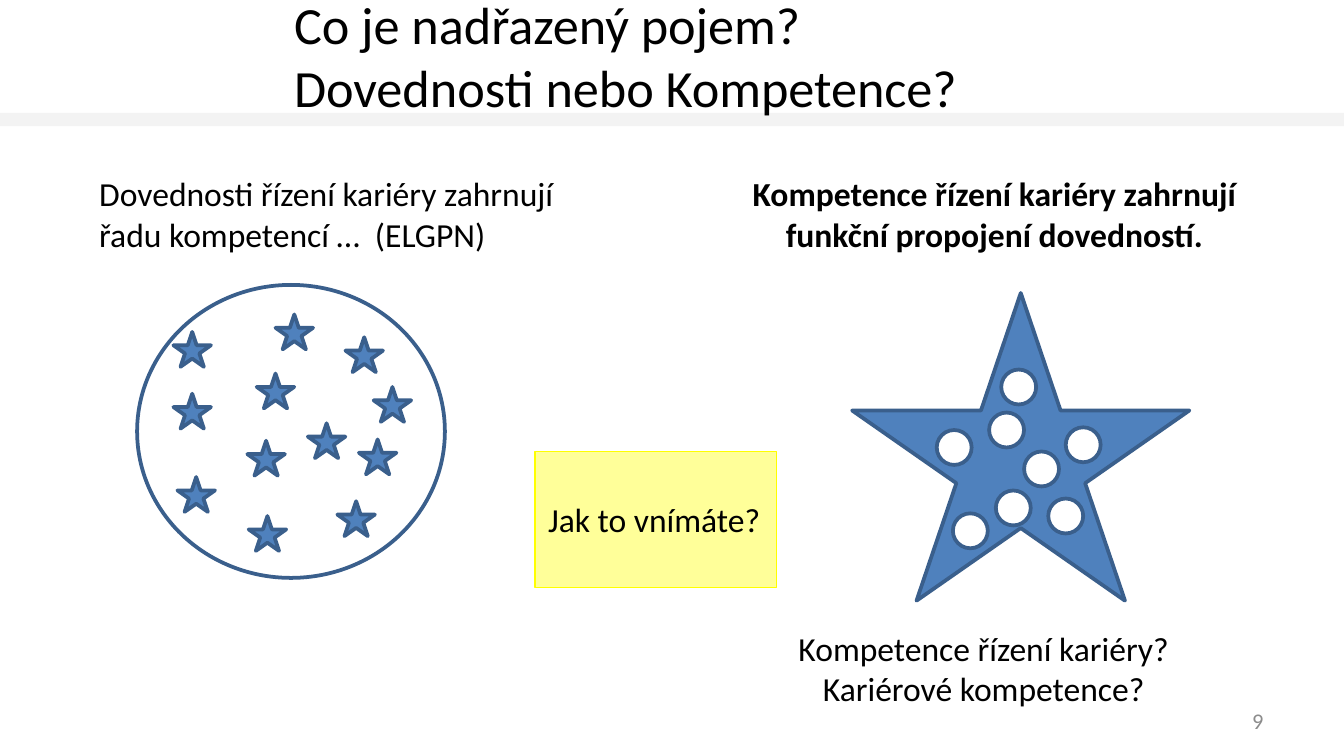
from lxml import etree
from pptx import Presentation
from pptx.dml.color import RGBColor
from pptx.enum.shapes import MSO_SHAPE
from pptx.enum.text import MSO_ANCHOR, PP_ALIGN
from pptx.oxml.ns import qn
from pptx.util import Inches, Pt

RECT, OVAL, STAR = MSO_SHAPE.RECTANGLE, MSO_SHAPE.OVAL, MSO_SHAPE.STAR_5_POINT
LEFT, CENTER, RIGHT = PP_ALIGN.LEFT, PP_ALIGN.CENTER, PP_ALIGN.RIGHT
TOP, MIDDLE = MSO_ANCHOR.TOP, MSO_ANCHOR.MIDDLE
FONT = "Calibri"
BLACK, WHITE, BLUE, NAVY = "000000", "FFFFFF", "4F81BD", "3A5F8C"
WIDTH = 10
HEIGHT = WIDTH * 9 / 16

STARS = [
    (1.29, 2.47), (2.51, 3.73), (1.32, 3.55), (2.67, 3.27),
    (2.29, 3.15), (1.85, 3.84), (1.29, 2.93), (2.57, 2.51),
    (2.05, 2.34), (1.91, 2.78), (1.84, 3.28), (2.78, 2.88),
]
DOTS = [
    (7.41, 3.65), (7.62, 3.36), (7.93, 3.18), (6.97, 3.2),
    (7.09, 3.82), (7.8, 3.71), (7.36, 3.07), (7.45, 2.75),
]


def paint(color, value):
    """Set a colour format from a hex string."""
    color.rgb = RGBColor.from_string(value)


def add_run(para, text, size, color, bold):
    """Add one styled run to a paragraph."""
    run = para.add_run()
    run.text = text
    run.font.name = FONT
    run.font.size = Pt(size)
    run.font.bold = bold
    paint(run.font.color, color)


def write(frame, paras, size=18, align=LEFT, anchor=TOP, color=BLACK,
          bold=False, wrap=True):
    """Fill a text frame with paragraphs, breaking lines at newlines."""
    frame.word_wrap = wrap
    frame.vertical_anchor = anchor
    for i, text in enumerate(paras):
        para = frame.add_paragraph() if i else frame.paragraphs[0]
        para.alignment = align
        for j, line in enumerate(text.split("\n")):
            if j:
                para.add_line_break()
            add_run(para, line, size, color, bold)


def add_text(slide, box, paras, **style):
    """Add a text box at left, top, width, height."""
    label = slide.shapes.add_textbox(*map(Inches, box))
    write(label.text_frame, paras, **style)


def add_shape(slide, kind, box, fill, line=NAVY, width=2):
    """Add a filled preset shape, outlined unless line is None."""
    shape = slide.shapes.add_shape(kind, *map(Inches, box))
    shape.shadow.inherit = False
    shape.fill.solid()
    paint(shape.fill.fore_color, fill)
    if line is None:
        shape.line.fill.background()
    else:
        paint(shape.line.color, line)
        shape.line.width = Pt(width)
    return shape


def add_band(slide):
    """Add the translucent band below the title."""
    band = add_shape(slide, RECT, (0, 0.84, WIDTH, 0.1), "191919", None)
    tint = band._element.spPr.find(".//" + qn("a:srgbClr"))
    etree.SubElement(tint, qn("a:alpha"), val="5000")


def add_set(slide, whole, part, spots, size):
    """Add a large shape and the small ones scattered inside it."""
    add_shape(slide, *whole)
    kind, fill = part
    for spot in spots:
        add_shape(slide, kind, spot + size, fill)


def main():
    """Build the slide and save it."""
    deck = Presentation()
    deck.slide_width, deck.slide_height = Inches(WIDTH), Inches(HEIGHT)
    slide = deck.slides.add_slide(deck.slide_layouts[6])

    add_band(slide)
    add_text(slide, (2.09, 0, 7.9, 0.82),
             ["Co je nadřazený pojem? \nDovednosti nebo Kompetence?"],
             size=28, anchor=MIDDLE)
    add_text(slide, (7.17, 5.21, 2.33, 0.3), ["9"],
             size=12, align=RIGHT, anchor=MIDDLE, color="8C8C8C")

    add_text(slide, (0.64, 1.24, 3.86, 0.71),
             ["Dovednosti řízení kariéry zahrnují řadu kompetencí …  (ELGPN)"])
    add_set(slide, (OVAL, (1.02, 2.12, 2.29, 2.18), WHITE),
            (STAR, BLUE), STARS, (0.28, 0.26))

    add_set(slide, (STAR, (6.34, 2.18, 2.51, 2.29), BLUE),
            (OVAL, WHITE), DOTS, (0.26, 0.26))
    add_text(slide, (5.47, 1.24, 3.86, 0.71),
             ["Kompetence řízení kariéry zahrnují funkční propojení dovedností."],
             align=CENTER, bold=True)

    ask = add_shape(slide, RECT, (3.98, 3.36, 1.8, 1.01),
                    "FFFF99", "FFFF00", 0.75)
    write(ask.text_frame, ["Jak to vnímáte?"], anchor=MIDDLE, wrap=False)
    add_text(slide, (5.39, 4.62, 3.86, 0.71),
             ["Kompetence řízení kariéry?", "Kariérové kompetence?"],
             align=CENTER)

    deck.save("out.pptx")


if __name__ == "__main__":
    main()
